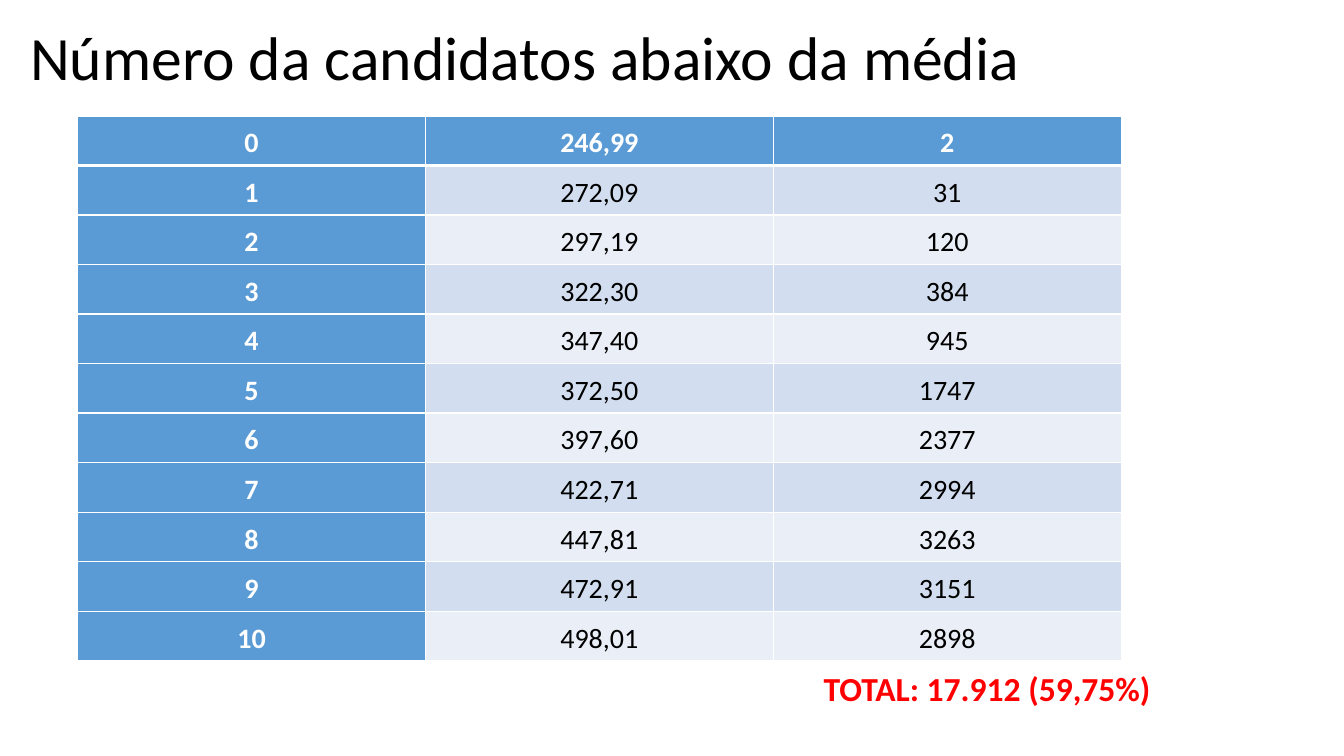
from pptx import Presentation
from pptx import util as u
from pptx.dml.color import RGBColor
from pptx.enum import text
from pptx.oxml import parse_xml
from pptx.oxml.ns import nsdecls

AVERAGES = ["246,99", "272,09", "297,19", "322,30", "347,40", "372,50",
            "397,60", "422,71", "447,81", "472,91", "498,01"]
CANDIDATES = [2, 31, 120, 384, 945, 1747, 2377, 2994, 3263, 3151, 2898]
BLUE, WHITE, BLACK, RED = "5B9BD5", "FFFFFF", "000000", "FF0000"
BANDS = ["EAEFF7", "D2DEEF"]
COLUMN_WIDTH = u.Inches(3.45)
ROW_HEIGHT = u.Inches(5.36 / len(AVERAGES))


def format_text(paragraph, size, color, bold=False):
    for run in paragraph.runs:
        run.font.name = "Calibri"
        run.font.size = u.Pt(size)
        run.font.bold = bold
        run.font.color.rgb = RGBColor.from_string(color)


def add_border(cell, position, side, points):
    line = parse_xml(
        f'<a:ln{side} {nsdecls("a")} w="{u.Pt(points)}"><a:solidFill>'
        f'<a:srgbClr val="{WHITE}"/></a:solidFill></a:ln{side}>')
    cell._tc.get_or_add_tcPr().insert(position, line)


presentation = Presentation()
presentation.slide_width = u.Inches(13.33)
presentation.slide_height = u.Inches(7.5)
slide = presentation.slides.add_slide(presentation.slide_layouts[5])

title = slide.shapes.title
title.left, title.top = u.Inches(0.2), u.Inches(-0.12)
title.width, title.height = u.Inches(11.5), u.Inches(1.45)
title.text_frame.text = "Número da candidatos abaixo da média"
title.text_frame.vertical_anchor = text.MSO_ANCHOR.MIDDLE
heading = title.text_frame.paragraphs[0]
heading.alignment = text.PP_ALIGN.LEFT
heading.line_spacing = 0.9
format_text(heading, 44, BLACK)

table = slide.shapes.add_table(
    len(AVERAGES), 3, u.Inches(0.77), u.Inches(1.15),
    3 * COLUMN_WIDTH, len(AVERAGES) * ROW_HEIGHT).table
table.first_col = True

for row, values in enumerate(zip(range(len(AVERAGES)), AVERAGES, CANDIDATES)):
    for column, value in enumerate(values):
        cell = table.cell(row, column)
        is_header = row == 0 or column == 0
        cell.fill.solid()
        cell.fill.fore_color.rgb = RGBColor.from_string(
            BLUE if is_header else BANDS[row % 2])
        cell.margin_left = cell.margin_right = u.Inches(0.05)
        cell.margin_top = cell.margin_bottom = u.Inches(0.05)
        cell.vertical_anchor = text.MSO_ANCHOR.MIDDLE
        cell.text_frame.text = str(value)
        paragraph = cell.text_frame.paragraphs[0]
        paragraph.alignment = text.PP_ALIGN.CENTER
        paragraph.line_spacing = 1.15
        format_text(paragraph, 20, WHITE if is_header else BLACK, is_header)
        widths = {"L": 1, "R": 1, "T": 3 if row == 1 else 1, "B": 3 if row == 0 else 1}
        for position, (side, points) in enumerate(widths.items()):
            add_border(cell, position, side, points)

total = slide.shapes.add_textbox(
    u.Inches(8.07), u.Inches(6.58), u.Inches(3.63), u.Inches(0.5))
total.text_frame.word_wrap = True
total.text_frame.auto_size = text.MSO_AUTO_SIZE.SHAPE_TO_FIT_TEXT
total.text_frame.text = "TOTAL: 17.912 (59,75%)"
format_text(total.text_frame.paragraphs[0], 24, RED, True)

presentation.save("out.pptx")
